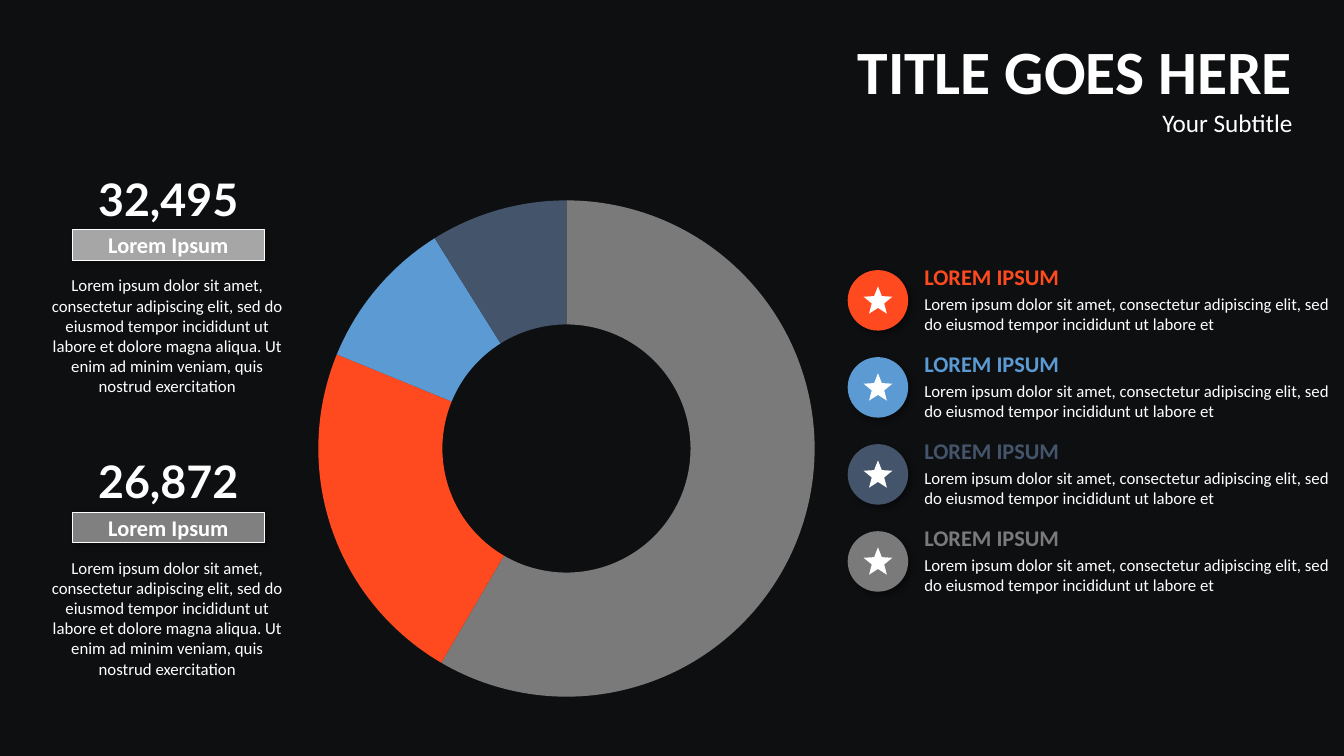
import math
from dataclasses import dataclass

import pptx
import pptx.chart.data
import pptx.dml.color
import pptx.enum.chart
import pptx.enum.shapes
import pptx.enum.text
import pptx.oxml
import pptx.oxml.ns
import pptx.util

SHAPE = pptx.enum.shapes.MSO_SHAPE
ALIGN = pptx.enum.text.PP_ALIGN
ANCHOR = pptx.enum.text.MSO_ANCHOR


@dataclass(frozen=True)
class Theme:
    """Colours, fonts and type sizes of the slide."""
    background: str = "0E0F11"
    text: str = "FFFFFF"
    orange: str = "FE4A1E"
    blue: str = "5C9AD3"
    navy: str = "44546B"
    grey: str = "7A7A7A"
    light_label: str = "A6A6A6"
    dark_label: str = "808080"
    body_font: str = "Calibri"
    number_font: str = "Lato"
    title_size: int = 44
    number_size: int = 32
    subtitle_size: int = 18
    heading_size: int = 16
    body_size: int = 12


THEME = Theme()
COLUMNS, ROWS = 160, 90
SLIDE_WIDTH, SLIDE_HEIGHT = pptx.util.Inches(13.333), pptx.util.Inches(7.5)
CELL = SLIDE_HEIGHT / ROWS
TIGHT = (0.07, 0.03)
NORMAL = (0.1, 0.05)

SLICES = ((59, THEME.grey), (23, THEME.orange), (10, THEME.blue), (9, THEME.navy))
LEGEND_COLOURS = (THEME.orange, THEME.blue, THEME.navy, THEME.grey)
LEGEND_TOP, LEGEND_PITCH = 30.96, 10.36
STATS = (("32,495", THEME.light_label), ("26,872", THEME.dark_label))
STATS_TOP, STATS_PITCH = 19.8, 33.6
LEGEND_BODY = ("Lorem ipsum dolor sit amet, consectetur adipiscing elit, "
               "sed do eiusmod tempor incididunt ut labore et")
STAT_BODY = LEGEND_BODY + (" dolore magna aliqua. Ut enim ad minim veniam, "
                           "quis nostrud exercitation")


def rgb(colour):
    """Turn a hex string into a colour."""
    return pptx.dml.color.RGBColor.from_string(colour)


def grid(*cells):
    """Turn grid columns and rows into slide lengths."""
    return [round(cell * CELL) for cell in cells]


def paint(shape, colour):
    """Give a shape a solid fill, no outline and no shadow."""
    shape.shadow.inherit = False
    shape.fill.solid()
    shape.fill.fore_color.rgb = rgb(colour)
    shape.line.fill.background()


def cast_shadow(shape):
    """Add a soft shadow to the lower right of a painted shape."""
    effects = shape.element.spPr.find(pptx.oxml.ns.qn("a:effectLst"))
    effects.append(pptx.oxml.parse_xml(
        f'<a:outerShdw {pptx.oxml.ns.nsdecls("a")} blurRad="50800" dist="38100" '
        'dir="2700000" algn="tl" rotWithShape="0"><a:srgbClr val="000000">'
        '<a:alpha val="40000"/></a:srgbClr></a:outerShdw>'))


def write(frame, lines, align, insets=NORMAL, gap=0):
    """Write (text, size, bold, colour, font) lines as paragraphs."""
    frame.word_wrap = True
    frame.margin_left = frame.margin_right = pptx.util.Inches(insets[0])
    frame.margin_top = frame.margin_bottom = pptx.util.Inches(insets[1])
    frame.text = "\n".join(line[0] for line in lines)
    for index, (paragraph, line) in enumerate(zip(frame.paragraphs, lines)):
        paragraph.alignment = align
        if index and gap:
            paragraph.space_before = pptx.util.Pt(gap)
        font = paragraph.runs[0].font
        font.size, font.bold = pptx.util.Pt(line[1]), line[2]
        font.color.rgb, font.name = rgb(line[3]), line[4]


def add_text(slide, cells, lines, align, insets=NORMAL, gap=0):
    """Add a text box at a grid position."""
    box = slide.shapes.add_textbox(*grid(*cells))
    write(box.text_frame, lines, align, insets, gap)


def add_doughnut(slide):
    """Add the doughnut chart with one colour per slice."""
    data = pptx.chart.data.CategoryChartData()
    data.categories = [str(number) for number in range(1, len(SLICES) + 1)]
    data.add_series("Series 1", [value for value, _ in SLICES])
    chart = slide.shapes.add_chart(pptx.enum.chart.XL_CHART_TYPE.DOUGHNUT,
                                   *grid(36, 22.2, 62.88, 62.4), data).chart
    chart.has_legend = chart.has_title = False
    chart.font.name = THEME.body_font
    chart.font.size = pptx.util.Pt(THEME.subtitle_size)
    chart.font.color.rgb = rgb("000000")
    plot = chart.plots[0]
    plot.vary_by_categories = True
    for index, (_, colour) in enumerate(SLICES):
        slice_format = plot.series[0].points[index].format
        slice_format.fill.solid()
        slice_format.fill.fore_color.rgb = rgb(colour)
        slice_format.line.fill.background()
    chart.element.find(".//" + pptx.oxml.ns.qn("c:holeSize")).set("val", "72")


def add_star_badge(slide, left, top, colour):
    """Add a round badge holding a white star."""
    badge = slide.shapes.add_group_shape()
    disc = badge.shapes.add_shape(SHAPE.OVAL, *grid(left, top, 7.2, 7.2))
    paint(disc, colour)
    cast_shadow(disc)
    corners = []
    for step in range(10):
        radius = 0.78 if step % 2 else 1.8
        angle = math.radians(36 * step)
        corners.append(grid(left + 3.6 + radius * math.sin(angle),
                            top + 3.72 - radius * math.cos(angle)))
    outline = badge.shapes.build_freeform(*corners[0])
    outline.add_line_segments(corners[1:], close=True)
    paint(outline.convert_to_shape(), THEME.text)


def add_legend_entry(slide, top, colour):
    """Add a coloured heading with its body text and badge."""
    add_text(slide, (109.2, top, 50.8, 9.36),
             [("LOREM IPSUM", THEME.heading_size, True, colour, THEME.body_font),
              (LEGEND_BODY, THEME.body_size, False, THEME.text, THEME.body_font)],
             ALIGN.LEFT, TIGHT, gap=2.4)
    add_star_badge(slide, 100.92, top + 1.2, colour)


def add_stat(slide, top, number, colour):
    """Add a large number, its label bar and a description."""
    add_text(slide, (4.92, top + 12.6, 30, 15.36),
             [(STAT_BODY, THEME.body_size, False, THEME.text, THEME.body_font)],
             ALIGN.CENTER, TIGHT)
    label = slide.shapes.add_shape(SHAPE.RECTANGLE, *grid(8.64, top + 7.56, 22.8, 3.6))
    paint(label, colour)
    cast_shadow(label)
    label.line.color.rgb = rgb(THEME.text)
    label.line.width = pptx.util.Pt(0.5)
    label.text_frame.vertical_anchor = ANCHOR.MIDDLE
    write(label.text_frame,
          [("Lorem Ipsum", THEME.heading_size, True, THEME.text, THEME.body_font)],
          ALIGN.CENTER)
    add_text(slide, (8.64, top, 22.8, 7.68),
             [(number, THEME.number_size, True, THEME.text, THEME.number_font)],
             ALIGN.CENTER)


def main():
    """Build the slide and save it."""
    deck = pptx.Presentation()
    deck.slide_width, deck.slide_height = SLIDE_WIDTH, SLIDE_HEIGHT
    slide = deck.slides.add_slide(deck.slide_layouts[6])
    slide.background.fill.solid()
    slide.background.fill.fore_color.rgb = rgb(THEME.background)
    add_doughnut(slide)
    for row, colour in enumerate(LEGEND_COLOURS):
        add_legend_entry(slide, LEGEND_TOP + row * LEGEND_PITCH, colour)
    for row, (number, colour) in enumerate(STATS):
        add_stat(slide, STATS_TOP + row * STATS_PITCH, number, colour)
    add_text(slide, (82.8, 3.36, 72.24, 13.68),
             [("TITLE GOES HERE", THEME.title_size, True, THEME.text, THEME.body_font),
              ("Your Subtitle", THEME.subtitle_size, False, THEME.text, THEME.body_font)],
             ALIGN.RIGHT)
    deck.save("out.pptx")


if __name__ == "__main__":
    main()
